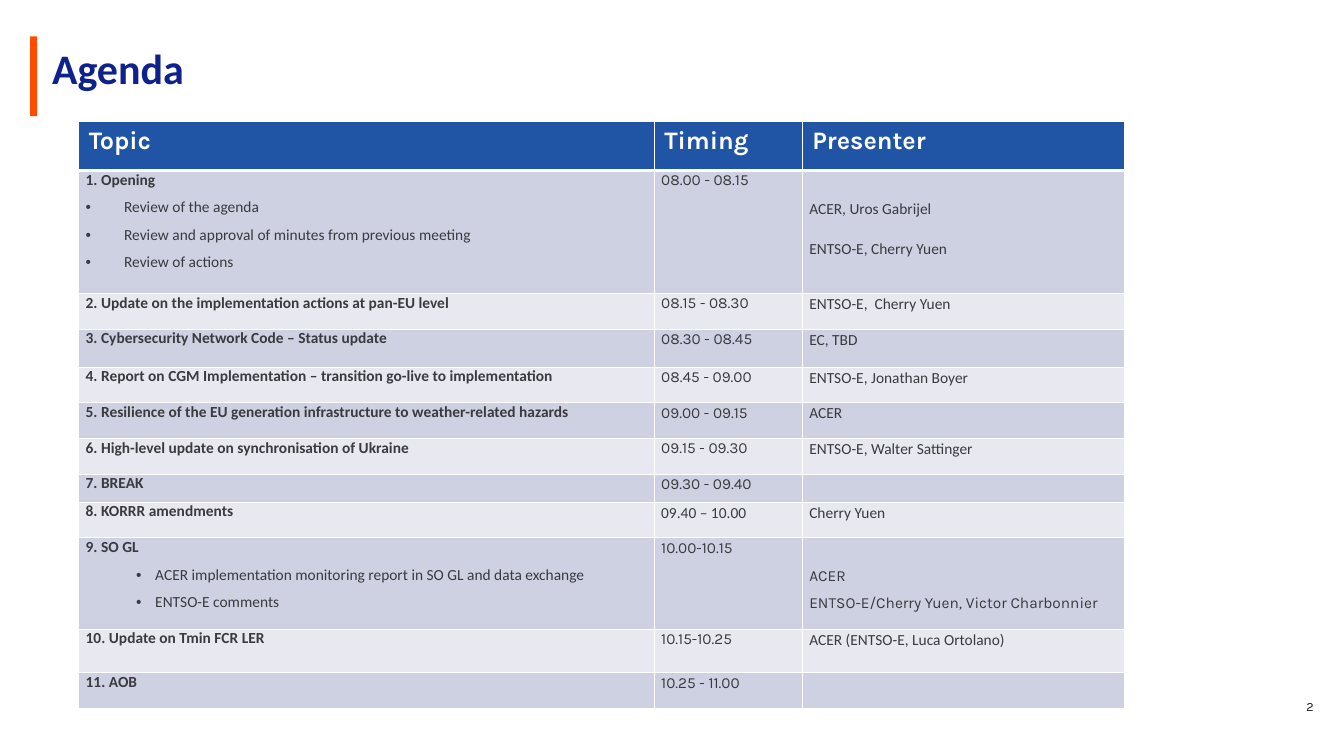
import pptx
import pptx.dml.color
import pptx.enum.shapes
import pptx.enum.text
import pptx.oxml.ns
import pptx.util
from lxml import etree

Pt = pptx.util.Pt
qn = pptx.oxml.ns.qn

NAVY, BLUE, ORANGE, WHITE = "0F218B", "2054A5", "FF4D00", "FFFFFF"
TEXT, BLACK = "3A3A3F", "1D1D20"
BANDS = ("CDD1E1", "E8E9F0")
COLUMN_WIDTHS = (411.1, 105.8, 230.4)
HEADER = ("Topic", "Timing", "Presenter")
HEADER_HEIGHT = 35.1
LEADING = 1.07
BLANK_LINE = 20  # height of one line with the space after it

# Row height, topic, sub-points, timing, presenters
AGENDA = [
    (87.8, "1. Opening",
     ["Review of the agenda", "Review and approval of minutes from previous meeting",
      "Review of actions"],
     "08.00 - 08.15", ["ACER, Uros Gabrijel", "ENTSO-E, Cherry Yuen"]),
    (25.5, "2. Update on the implementation actions at pan-EU level", [],
     "08.15 - 08.30", ["ENTSO-E,  Cherry Yuen"]),
    (27.2, "3. Cybersecurity Network Code – Status update", [],
     "08.30 - 08.45", ["EC, TBD"]),
    (25.5, "4. Report on CGM Implementation – transition go-live to implementation", [],
     "08.45 - 09.00", ["ENTSO-E, Jonathan Boyer"]),
    (25.5, "5. Resilience of the EU generation infrastructure to weather-related hazards", [],
     "09.00 - 09.15", ["ACER"]),
    (25.5, "6. High-level update on synchronisation of Ukraine", [],
     "09.15 - 09.30", ["ENTSO-E, Walter Sattinger"]),
    (20, "7. BREAK", [], "09.30 - 09.40", []),
    (25.5, "8. KORRR amendments", [], "09.40 – 10.00", ["Cherry Yuen"]),
    (65.2, "9. SO GL",
     ["ACER implementation monitoring report in SO GL and data exchange",
      "ENTSO-E comments"],
     "10.00-10.15", ["ACER", "ENTSO-E/Cherry Yuen, Victor Charbonnier"]),
    (31.2, "10. Update on Tmin FCR LER", [],
     "10.15-10.25", ["ACER (ENTSO-E, Luca Ortolano)"]),
    (25.5, "11. AOB", [], "10.25 - 11.00", []),
]


def color(value):
    return pptx.dml.color.RGBColor.from_string(value)


def style(paragraph, size, name, value, bold=False):
    font = paragraph.font
    font.size, font.name, font.bold = Pt(size), name, bold
    font.color.rgb = color(value)


def add_bullet(paragraph, margin, hanging):
    properties = paragraph._p.get_or_add_pPr()
    properties.set("marL", str(Pt(margin)))
    properties.set("indent", str(-Pt(hanging)))
    etree.SubElement(properties, qn("a:buFont")).set("typeface", "Arial")
    etree.SubElement(properties, qn("a:buChar")).set("char", "•")


def format_cell(cell, fill, bottom_width=1):
    """White borders first, then the fill, as the schema orders them."""
    properties = cell._tc.get_or_add_tcPr()
    for side, width in (("L", 1), ("R", 1), ("T", 1), ("B", bottom_width)):
        line = etree.SubElement(properties, qn("a:ln" + side), w=str(Pt(width)))
        line_fill = etree.SubElement(line, qn("a:solidFill"))
        etree.SubElement(line_fill, qn("a:srgbClr"), val=WHITE)
    cell.fill.solid()
    cell.fill.fore_color.rgb = color(fill)


def write_cell(cell, lines, name, bold=False, leading=None, indent=None):
    """Write one paragraph per line; indent makes all but the first bullets."""
    cell.margin_left = cell.margin_right = Pt(5)
    cell.margin_top = cell.margin_bottom = 0
    frame = cell.text_frame
    for index, line in enumerate(lines):
        paragraph = frame.paragraphs[0] if index == 0 else frame.add_paragraph()
        paragraph.text = line
        paragraph.space_after = Pt(6)
        if leading:
            paragraph.line_spacing = leading
        if index and indent:
            add_bullet(paragraph, *indent)
        style(paragraph, 11, name, TEXT, bold and index == 0)
    if not lines:
        etree.SubElement(frame.paragraphs[0]._p, qn("a:endParaRPr"), sz="1100")


def add_text(slide, text, left, top, width, height, leading):
    box = slide.shapes.add_textbox(Pt(left), Pt(top), Pt(width), Pt(height))
    frame = box.text_frame
    frame.word_wrap = True
    frame.vertical_anchor = pptx.enum.text.MSO_ANCHOR.MIDDLE
    paragraph = frame.paragraphs[0]
    paragraph.text = text
    paragraph.line_spacing = Pt(leading)
    return paragraph


def add_title(slide, left, top, width, height):
    bar = slide.shapes.add_shape(pptx.enum.shapes.MSO_SHAPE.RECTANGLE,
                                 Pt(left), Pt(top), Pt(5), Pt(height))
    bar.shadow.inherit = False
    bar.fill.solid()
    bar.fill.fore_color.rgb = color(ORANGE)
    bar.line.fill.background()

    title = add_text(slide, "Agenda", left + 8.6, top + 10.8, width - 8.6, 28, 32)
    style(title, 30, "Calibri", NAVY, True)


def add_agenda(slide, left, top):
    height = HEADER_HEIGHT + sum(row[0] for row in AGENDA)
    table = slide.shapes.add_table(len(AGENDA) + 1, len(HEADER), Pt(left), Pt(top),
                                   Pt(sum(COLUMN_WIDTHS)), Pt(height)).table
    for column, width in zip(table.columns, COLUMN_WIDTHS):
        column.width = Pt(width)

    # Header row
    table.rows[0].height = Pt(HEADER_HEIGHT)
    for cell, heading in zip(table.rows[0].cells, HEADER):
        format_cell(cell, BLUE, 3)
        cell.text = heading
        style(cell.text_frame.paragraphs[0], 18, "Karla", WHITE, True)

    # Agenda items
    for index, (height, topic, points, timing, presenters) in enumerate(AGENDA):
        row = table.rows[index + 1]
        row.height = Pt(height)
        for cell in row.cells:
            format_cell(cell, BANDS[index % 2])
        topic_cell, timing_cell, presenter_cell = row.cells
        is_opening, is_guideline = index == 0, topic == "9. SO GL"
        write_cell(topic_cell, [topic] + points, "Calibri", True,
                   indent=(27.4, 27.4) if is_opening else (49.7, 13.7))
        write_cell(timing_cell, [timing],
                   "Calibri" if topic.startswith("8.") else "Karla", leading=LEADING)
        write_cell(presenter_cell, presenters,
                   "Karla" if is_guideline else "Calibri", leading=LEADING)
        if points:
            presenter_cell.margin_top = Pt(BLANK_LINE)
        if is_opening:
            presenter_cell.text_frame.paragraphs[0].space_after = Pt(14.3)


def add_slide_number(slide, left, top, width, height):
    number = add_text(slide, "2", left, top, width, height, 9)
    number.alignment = pptx.enum.text.PP_ALIGN.RIGHT
    style(number, 9, "Karla", BLACK)


def main():
    presentation = pptx.Presentation()
    presentation.slide_width, presentation.slide_height = Pt(960), Pt(540)
    slide = presentation.slides.add_slide(presentation.slide_layouts[6])
    add_slide_number(slide, 486, 491, 459.4, 28.8)
    add_title(slide, 21.6, 25.9, 923.8, 57)
    add_agenda(slide, 56.2, 86.7)
    presentation.save("out.pptx")


if __name__ == "__main__":
    main()
